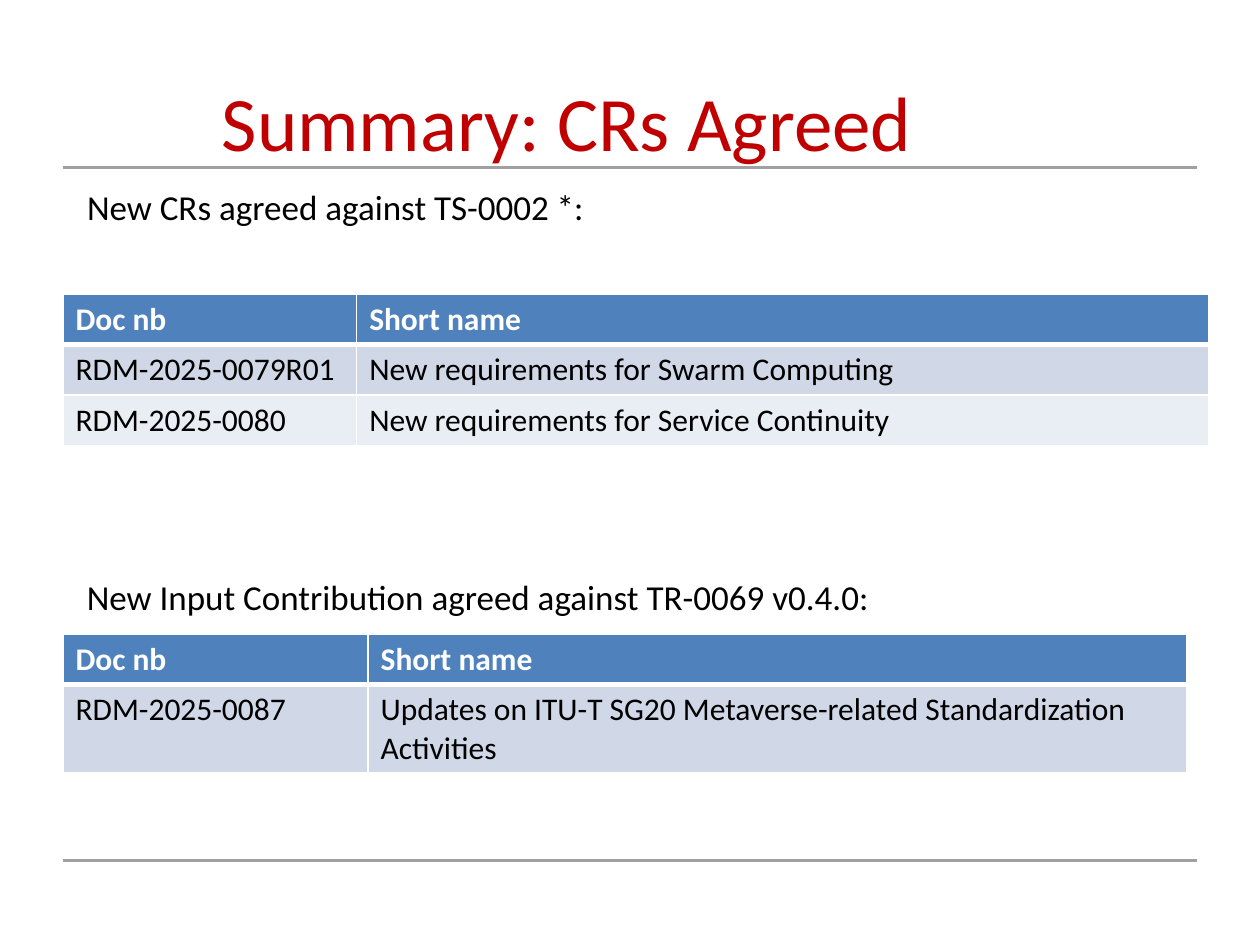
from lxml import etree
from pptx import Presentation
from pptx.dml.color import RGBColor
from pptx.enum.shapes import MSO_CONNECTOR
from pptx.enum.text import MSO_ANCHOR, PP_ALIGN
from pptx.oxml.ns import qn
from pptx.util import Cm, Pt

STRAIGHT = MSO_CONNECTOR.STRAIGHT
MIDDLE, TOP = MSO_ANCHOR.MIDDLE, MSO_ANCHOR.TOP
CENTER = PP_ALIGN.CENTER


def color(value):
    return RGBColor.from_string(value)


def style(p, size, value, bold=False):
    for r in p.runs:
        r.font.name = "Calibri"
        r.font.size = Pt(size)
        r.font.bold = bold
        r.font.color.rgb = color(value)


prs = Presentation()
prs.slide_width, prs.slide_height = Cm(25.4), Cm(19.05)
s = prs.slides.add_slide(prs.slide_layouts[1])

for y in (17.35, 3.38):
    line = s.shapes.add_connector(STRAIGHT, Cm(1.27), Cm(y), Cm(24.13), Cm(y))
    line.line.color.rgb = color("A0A0A3")
    line.line.width = Pt(1.75)
    etree.SubElement(line._element.spPr, qn("a:effectLst"))

title = s.shapes.title
title.left, title.top, title.width, title.height = Cm(0), Cm(1.27), Cm(22.86), Cm(2.34)
title.text_frame.text = "Summary: CRs Agreed"
title.text_frame.vertical_anchor = MIDDLE
title.text_frame.paragraphs[0].alignment = CENTER
style(title.text_frame.paragraphs[0], 44, "C00000")

body = s.placeholders[1]
second = s.shapes.add_textbox(Cm(1.27), Cm(11.48), Cm(22.23), Cm(1.27))
captions = [
    (body, 3.61, "New CRs agreed against TS-0002 *:"),
    (second, 11.48, "New Input Contribution agreed against TR-0069 v0.4.0:"),
]
for sp, top, text in captions:
    sp.left, sp.top, sp.width, sp.height = Cm(1.27), Cm(top), Cm(22.23), Cm(1.27)
    tf = sp.text_frame
    tf.text = text
    tf.word_wrap = True
    tf.vertical_anchor = TOP
    p = tf.paragraphs[0]
    pPr = p._p.get_or_add_pPr()
    pPr.set("marL", str(Cm(0.23)))
    pPr.set("indent", "0")
    etree.SubElement(pPr, qn("a:buNone"))
    p.space_before = Pt(0)
    style(p, 20, "000000")

header = ("Doc nb", "Short name")
tables = [
    (5.93, (5.92, 17.17), [
        header,
        ("RDM-2025-0079R01", "New requirements for Swarm Computing"),
        ("RDM-2025-0080", "New requirements for Service Continuity"),
    ]),
    (12.78, (6.15, 16.51), [
        header,
        ("RDM-2025-0087", "Updates on ITU-T SG20 Metaverse-related Standardization Activities"),
    ]),
]
fills = ("4F81BD", "D0D8E8", "E9EDF4")
for top, widths, rows in tables:
    frame = s.shapes.add_table(len(rows), len(widths), Cm(1.27), Cm(top),
                               Cm(sum(widths)), Cm(0.89 * len(rows)))
    table = frame.table
    for column, width in zip(table.columns, widths):
        column.width = Cm(width)
    for i, row in enumerate(rows):
        for j, text in enumerate(row):
            cell = table.cell(i, j)
            cell.text = text
            style(cell.text_frame.paragraphs[0], 18, "000000" if i else "FFFFFF", i == 0)
            tcPr = cell._tc.get_or_add_tcPr()
            for side in ("lnL", "lnR", "lnT", "lnB"):
                thick = (i, side) in ((0, "lnB"), (1, "lnT"))
                ln = etree.SubElement(tcPr, qn("a:" + side), w=str(Pt(3 if thick else 0.96)))
                fill = etree.SubElement(ln, qn("a:solidFill"))
                etree.SubElement(fill, qn("a:srgbClr"), val="FFFFFF")
            cell.fill.solid()
            cell.fill.fore_color.rgb = color(fills[i])

prs.save("out.pptx")
